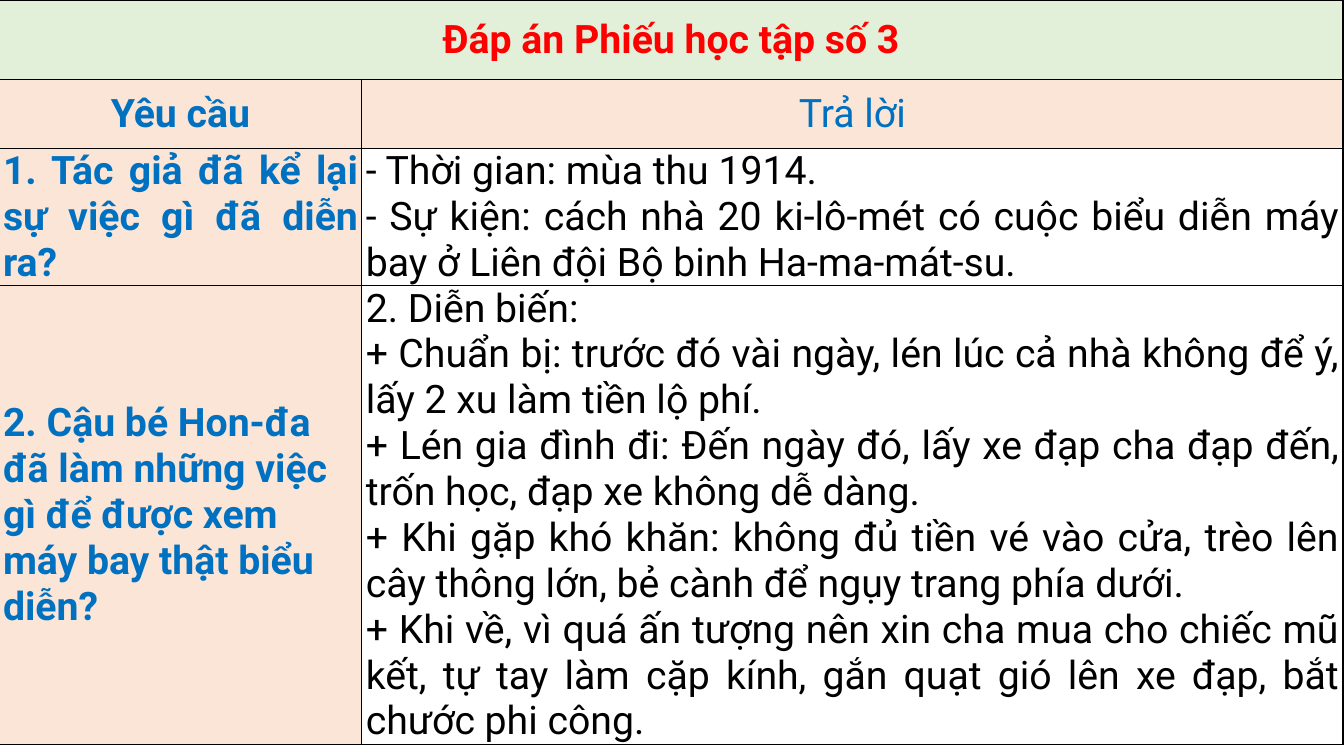
from lxml.etree import SubElement
from pptx import Presentation
from pptx.dml.color import RGBColor
from pptx.enum.text import MSO_ANCHOR as Anchor, PP_ALIGN as Align
from pptx.oxml.ns import qn
from pptx.util import Inches, Pt

WIDTH, HEIGHT = 13.33, 7.5
COLUMN_SHARES = [0.27, 0.73]
ROW_HEIGHTS = [0.79, 0.68, 1.36, 4.55]
BLUE, RED, BLACK, WHITE = "0070C0", "FF0000", "000000", "FFFFFF"
GREEN_FILL, PEACH_FILL = "E2F0D9", "FBE5D6"

TITLE = "Đáp án Phiếu học tập số 3"
HEADINGS = ["Yêu cầu", "Trả lời"]
QUESTIONS = [
    "1. Tác giả đã kể lại sự việc gì đã diễn ra?",
    "2. Cậu bé Hon-đa đã làm những việc gì để được xem máy bay thật biểu diễn?",
]
EVENT_ANSWER = [
    "- Thời gian: mùa thu 1914.",
    "- Sự kiện: cách nhà 20 ki-lô-mét có cuộc biểu diễn máy bay ở Liên đội Bộ binh Ha-ma-mát-su.",
]
STORY_ANSWER = [
    "2. Diễn biến:",
    "+ Chuẩn bị: trước đó vài ngày, lén lúc cả nhà không để ý, lấy 2 xu làm tiền lộ phí.",
    "+ Lén gia đình đi: Đến ngày đó, lấy xe đạp cha đạp đến, trốn học, đạp xe không dễ dàng.",
    "+ Khi gặp khó khăn: không đủ tiền vé vào cửa, trèo lên cây thông lớn, bẻ cành để ngụy trang phía dưới.",
    "+ Khi về, vì quá ấn tượng nên xin cha mua cho chiếc mũ kết, tự tay làm cặp kính, "
    "gắn quạt gió lên xe đạp, bắt chước phi công.",
]


def color(hex_code):
    return RGBColor.from_string(hex_code)


def add_borders(cell):
    properties = cell._tc.get_or_add_tcPr()
    for side in ("lnL", "lnR", "lnT", "lnB"):
        line = SubElement(properties, qn(f"a:{side}"), w=str(Pt(1)))
        solid = SubElement(line, qn("a:solidFill"))
        SubElement(solid, qn("a:srgbClr"), val=BLACK)


def fill_cell(cell, paragraphs, fill, font_color, bold, align, anchor=Anchor.MIDDLE):
    cell.margin_left = cell.margin_right = Inches(0.04)
    cell.margin_top = cell.margin_bottom = 0
    cell.vertical_anchor = anchor
    cell.fill.solid()
    cell.fill.fore_color.rgb = color(fill)
    cell.text_frame.text = "\n".join(paragraphs)
    for paragraph in cell.text_frame.paragraphs:
        paragraph.alignment = align
        font = paragraph.runs[0].font
        font.name, font.size, font.bold = "Roboto", Pt(28), bold
        font.color.rgb = color(font_color)


def add_answer_table(slide):
    frame = slide.shapes.add_table(
        len(ROW_HEIGHTS), len(COLUMN_SHARES), Inches(-0.01), 0,
        Inches(WIDTH), Inches(sum(ROW_HEIGHTS)))
    table = frame.table
    table.first_row = table.horz_banding = False
    for column, share in zip(table.columns, COLUMN_SHARES):
        column.width = Inches(WIDTH * share)
    for row, height in zip(table.rows, ROW_HEIGHTS):
        row.height = Inches(height)
    for cell in table.iter_cells():
        add_borders(cell)
    return table


def main():
    presentation = Presentation()
    presentation.slide_width = Inches(WIDTH)
    presentation.slide_height = Inches(HEIGHT)
    slide = presentation.slides.add_slide(presentation.slide_layouts[6])
    table = add_answer_table(slide)

    # Title row across both columns
    table.cell(0, 0).merge(table.cell(0, 1))
    fill_cell(table.cell(0, 0), [TITLE], GREEN_FILL, RED, True, Align.CENTER)

    # Column headings
    for column, heading in enumerate(HEADINGS):
        fill_cell(table.cell(1, column), [heading], PEACH_FILL, BLUE, column == 0, Align.CENTER)

    # Questions on the left, answers on the right
    question_aligns = [Align.JUSTIFY, Align.LEFT]
    answers = [EVENT_ANSWER, STORY_ANSWER]
    for row, (question, align, answer) in enumerate(zip(QUESTIONS, question_aligns, answers), 2):
        fill_cell(table.cell(row, 0), [question], PEACH_FILL, BLUE, True, align)
        fill_cell(table.cell(row, 1), answer, WHITE, BLACK, False, Align.JUSTIFY, Anchor.TOP)

    presentation.save("out.pptx")


if __name__ == "__main__":
    main()
